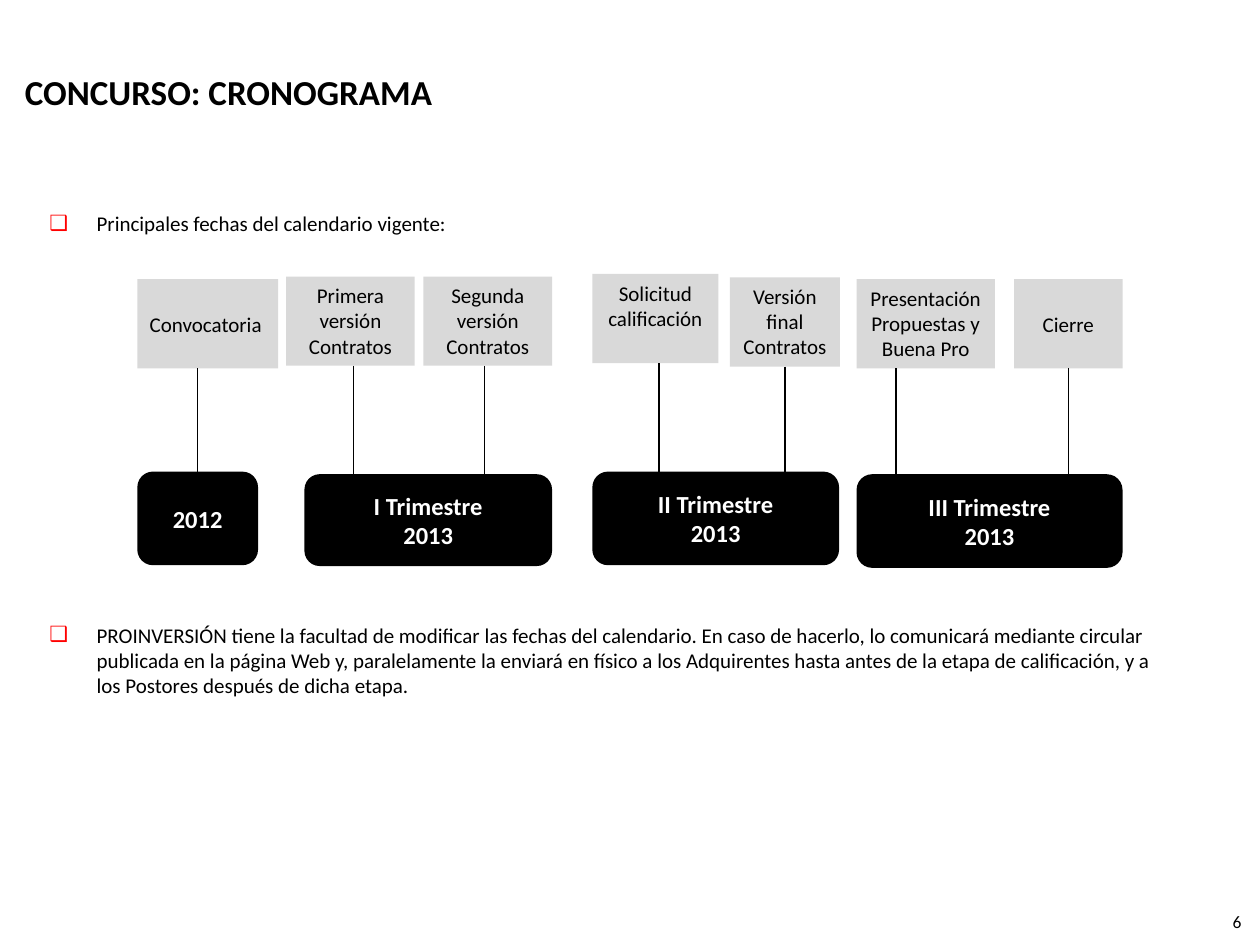
from lxml.etree import SubElement
from pptx import Presentation
from pptx.dml.color import RGBColor
from pptx.enum.shapes import MSO_CONNECTOR, MSO_SHAPE
from pptx.enum.text import MSO_ANCHOR, MSO_AUTO_SIZE, PP_ALIGN
from pptx.oxml.ns import qn
from pptx.util import Pt

LABEL_HEIGHT = 51
TOP, MIDDLE = MSO_ANCHOR.TOP, MSO_ANCHOR.MIDDLE
LEFT, CENTER, RIGHT = PP_ALIGN.LEFT, PP_ALIGN.CENTER, PP_ALIGN.RIGHT

# Each period: text, left, top, width, height, milestones.
# Each milestone: text, left, top, width, line position, anchor, alignment.
PERIODS = [
    ("2012", 0, 113, 69, 53.5, [
        ("Convocatoria", 0, 3, 80.5, 34.5, MIDDLE, LEFT),
    ]),
    ("I Trimestre\n2013", 95.5, 114.5, 141.5, 52.5, [
        ("Primera versión Contratos", 85, 1.5, 73.5, 123.5, TOP, CENTER),
        ("Segunda versión Contratos", 163.5, 1.5, 73.5, 198.5, TOP, CENTER),
    ]),
    ("II Trimestre\n2013", 260, 113, 141, 53.5, [
        ("Solicitud calificación", 260, 0, 72, 298, TOP, CENTER),
        ("Versión final Contratos", 338.5, 2, 63, 370, TOP, CENTER),
    ]),
    ("III Trimestre\n2013", 411, 114.5, 152, 53.5, [
        ("Presentación Propuestas y Buena Pro", 411, 3, 79, 433.5, TOP, CENTER),
        ("Cierre", 501, 3, 62, 532, MIDDLE, CENTER),
    ]),
]

BULLETS = [
    ("Principales fechas del calendario vigente:", 0),
    ("PROINVERSIÓN tiene la facultad de modificar las fechas del calendario. "
     "En caso de hacerlo, lo comunicará mediante circular publicada en la "
     "página Web y, paralelamente la enviará en físico a los Adquirentes hasta "
     "antes de la etapa de calificación, y a los Postores después de dicha "
     "etapa.", 221),
]


def color(code):
    return RGBColor.from_string(code)


def place(shape, box):
    shape.left, shape.top, shape.width, shape.height = map(Pt, box)


def write(frame, text, size=12, ink="000000", bold=False, align=LEFT,
          anchor=TOP, wrap=True):
    frame.word_wrap = wrap
    frame.auto_size = MSO_AUTO_SIZE.NONE
    frame.vertical_anchor = anchor
    frame.text = text
    for para in frame.paragraphs:
        para.alignment = align
        for span in para.runs:
            span.font.name = "Calibri"
            span.font.size = Pt(size)
            span.font.bold = bold
            span.font.color.rgb = color(ink)


def add_bullet(para):
    props = para._p.get_or_add_pPr()
    props.set("marL", str(Pt(27)))
    props.set("indent", str(Pt(-27)))
    tint = SubElement(props, qn("a:buClr"))
    SubElement(tint, qn("a:srgbClr")).set("val", "FF0000")
    SubElement(props, qn("a:buChar")).set("char", "❑")


def add_box(page, kind, box, fill, text, **style):
    shape = page.shapes.add_shape(kind, *map(Pt, box))
    shape.shadow.inherit = False
    shape.fill.solid()
    shape.fill.fore_color.rgb = color(fill)
    shape.line.fill.background()
    write(shape.text_frame, text, **style)
    return shape


def add_link(page, label, period, x):
    """Draw a vertical line, joined where it meets the middle of a side."""
    line = page.shapes.add_connector(
        MSO_CONNECTOR.STRAIGHT, Pt(x), label.top + label.height,
        Pt(x), period.top)
    line.line.color.rgb = color("000000")
    line.line.width = Pt(0.75)
    SubElement(line._element.spPr, qn("a:effectLst"))

    def is_middle(shape):
        return abs(shape.left + shape.width / 2 - Pt(x)) < Pt(0.1)

    if is_middle(label):
        line.begin_connect(label, 2)
    if is_middle(period):
        line.end_connect(period, 0)


def add_title(page, box):
    title = page.shapes.title
    place(title, box)
    write(title.text_frame, "CONCURSO: CRONOGRAMA", size=20, bold=True,
          anchor=MIDDLE)


def add_body(page, box):
    body = page.placeholders[1]
    place(body, box)
    write(body.text_frame, "\n".join(text for text, _ in BULLETS))
    for para, (_, gap) in zip(body.text_frame.paragraphs, BULLETS):
        add_bullet(para)
        para.space_before = Pt(gap)


def add_timeline(page, left, top):
    for name, x, y, width, height, milestones in PERIODS:
        period = add_box(
            page, MSO_SHAPE.ROUNDED_RECTANGLE,
            (left + x, top + y, width, height), "000000", name, size=14,
            ink="FFFFFF", bold=True, align=CENTER, anchor=MIDDLE, wrap=False)
        for text, x, y, width, line_x, anchor, align in milestones:
            label = add_box(
                page, MSO_SHAPE.RECTANGLE,
                (left + x, top + y, width, LABEL_HEIGHT), "D9D9D9", text,
                anchor=anchor, align=align)
            add_link(page, label, period, left + line_x)


def add_page_number(page, box):
    number = page.shapes.add_textbox(*map(Pt, box))
    write(number.text_frame, "6", size=10, align=RIGHT)


def main():
    deck = Presentation()
    deck.slide_width, deck.slide_height = Pt(720), Pt(540)
    page = deck.slides.add_slide(deck.slide_layouts[1])
    add_title(page, (7, 31, 676, 42))
    add_body(page, (21, 116.5, 644.5, 290))
    add_timeline(page, 78.5, 156.5)
    add_page_number(page, (680.5, 517, 36, 23))
    deck.save("out.pptx")


if __name__ == "__main__":
    main()
